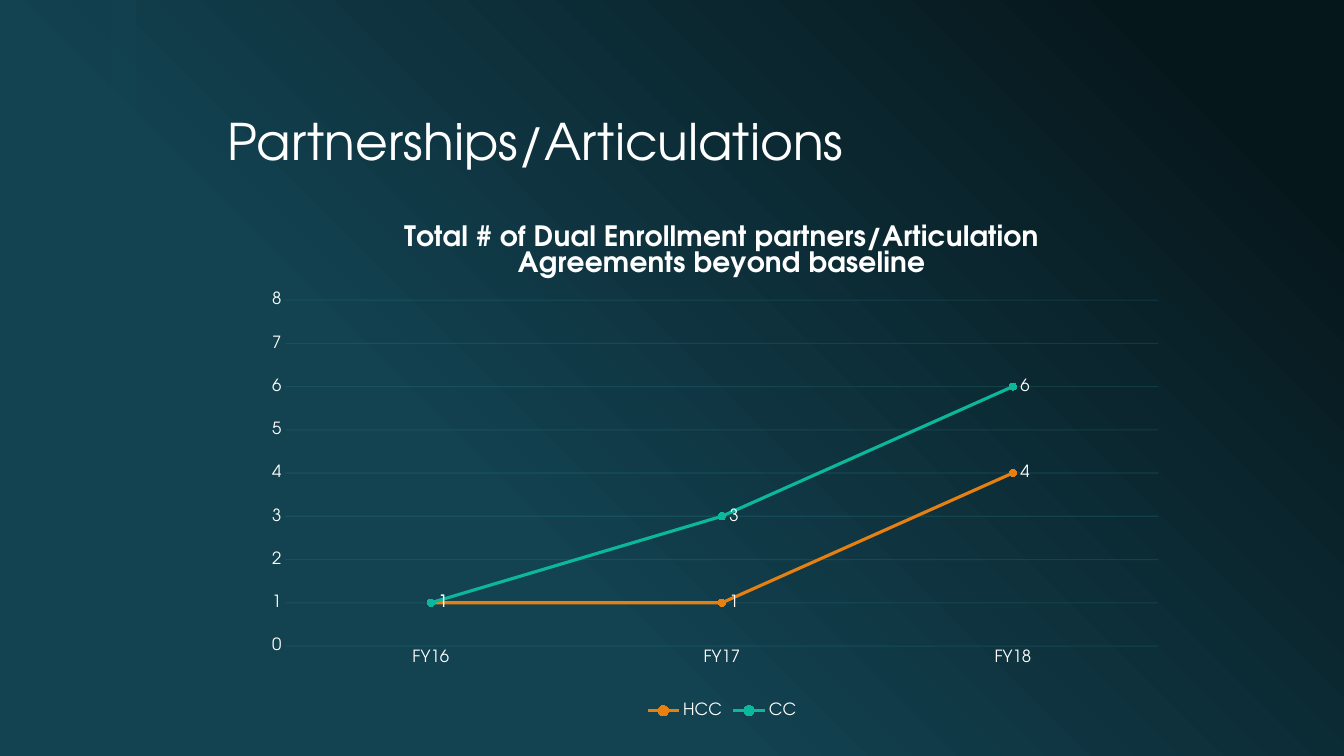
from copy import deepcopy
from lxml.etree import SubElement
from pptx import Presentation
from pptx.chart.data import CategoryChartData
from pptx.dml.color import RGBColor
from pptx.enum.chart import XL_CHART_TYPE as ChartType, XL_LABEL_POSITION as LabelPos
from pptx.enum.chart import XL_LEGEND_POSITION as LegendPos, XL_MARKER_STYLE as Marker
from pptx.enum.chart import XL_TICK_MARK as Tick
from pptx.enum.shapes import MSO_SHAPE as Preset
from pptx.enum.text import MSO_ANCHOR as Anchor
from pptx.oxml.ns import qn
from pptx.util import Inches, Pt

FACE = "TeX Gyre Adventor"
WHITE = "FFFFFF"
TEAL = "134251"


def rgb(code):
    return RGBColor.from_string(code)


def style(font, size, bold=False):
    font.name = FACE
    font.size = Pt(size)
    font.bold = bold
    font.color.rgb = rgb(WHITE)


deck = Presentation()
deck.slide_width, deck.slide_height = Inches(13.33), Inches(7.5)
slide = deck.slides.add_slide(deck.slide_layouts[6])

backdrop = slide.background.fill
backdrop.gradient()
backdrop.gradient_angle = 225
for stop, place, color in zip(backdrop.gradient_stops, (0.1, 0.65), ("06171C", TEAL)):
    stop.position = place
    stop.color.rgb = rgb(color)
stop_list = next(slide.background._cSld.iter(qn("a:gsLst")))
last_stop = deepcopy(stop_list[-1])
last_stop.set("pos", "100000")
stop_list.append(last_stop)

band = slide.shapes.add_shape(Preset.RECTANGLE, Inches(1.1), 0, Inches(0.25), Inches(7.5))
band.shadow.inherit = False
band.fill.solid()
band.fill.fore_color.rgb = rgb(TEAL)
band.line.fill.background()
band_color = next(band.fill._xPr.iter(qn("a:srgbClr")))
SubElement(band_color, qn("a:alpha")).set("val", "60000")

heading = slide.shapes.add_textbox(Inches(2.16), Inches(0.42), Inches(10), Inches(1.33)).text_frame
heading.word_wrap = True
heading.vertical_anchor = Anchor.BOTTOM
heading.text = "Partnerships/Articulations"
heading.paragraphs[0].line_spacing = 0.9
style(heading.paragraphs[0].runs[0].font, 36)

agreements = CategoryChartData(number_format="General")
agreements.categories = ["FY16", "FY17", "FY18"]
agreements.add_series("HCC", (1, 1, 4))
agreements.add_series("CC", (1, 3, 6))
chart = slide.shapes.add_chart(
    ChartType.LINE_MARKERS, Inches(2.16), Inches(2), Inches(10), Inches(5.17), agreements
).chart
style(chart.font, 10)

chart.has_title = True
chart_title = chart.chart_title.text_frame
chart_title.text = "Total # of Dual Enrollment partners/Articulation Agreements beyond baseline"
style(chart_title.paragraphs[0].runs[0].font, 20, True)
chart.chart_title.include_in_layout = False

chart.has_legend = True
chart.legend.position = LegendPos.BOTTOM
chart.legend.include_in_layout = False
style(chart.legend.font, 12)

for axis in (chart.category_axis, chart.value_axis):
    axis.major_tick_mark = axis.minor_tick_mark = Tick.NONE
    axis.format.line.fill.background()
    style(axis.tick_labels.font, 12)
values = chart.value_axis
values.minimum_scale, values.maximum_scale, values.major_unit = 0, 8, 1
values.has_major_gridlines = True
grid = values.major_gridlines.format.line
grid.width = Pt(0.75)
grid.color.rgb = rgb("339C9F")
grid_color = next(values.major_gridlines._xAx.iter(qn("a:srgbClr")))
SubElement(grid_color, qn("a:alpha")).set("val", "18000")

plot = chart.plots[0]
plot.vary_by_categories = False
for series, color in zip(plot.series, ("E68010", "0CB89B")):
    series.smooth = False
    series.format.line.width = Pt(2.25)
    series.format.line.color.rgb = rgb(color)
    series.marker.style = Marker.CIRCLE
    series.marker.size = 5
    series.marker.format.fill.solid()
    series.marker.format.fill.fore_color.rgb = rgb(color)
    series.marker.format.line.color.rgb = rgb(color)
    labels = series.data_labels
    labels.show_value = True
    labels.position = LabelPos.RIGHT
    style(labels.font, 12)

plot_area = chart._chartSpace.chart.plotArea
for old_layout in plot_area.findall(qn("c:layout")):
    plot_area.remove(old_layout)
layout = SubElement(plot_area, qn("c:layout"))
plot_area.insert(0, layout)
manual = SubElement(layout, qn("c:manualLayout"))
for tag, setting in (
    ("layoutTarget", "inner"), ("xMode", "edge"), ("yMode", "edge"),
    ("x", "0.067"), ("y", "0.189"), ("w", "0.866"), ("h", "0.664"),
):
    SubElement(manual, qn(f"c:{tag}")).set("val", setting)

deck.save("out.pptx")
